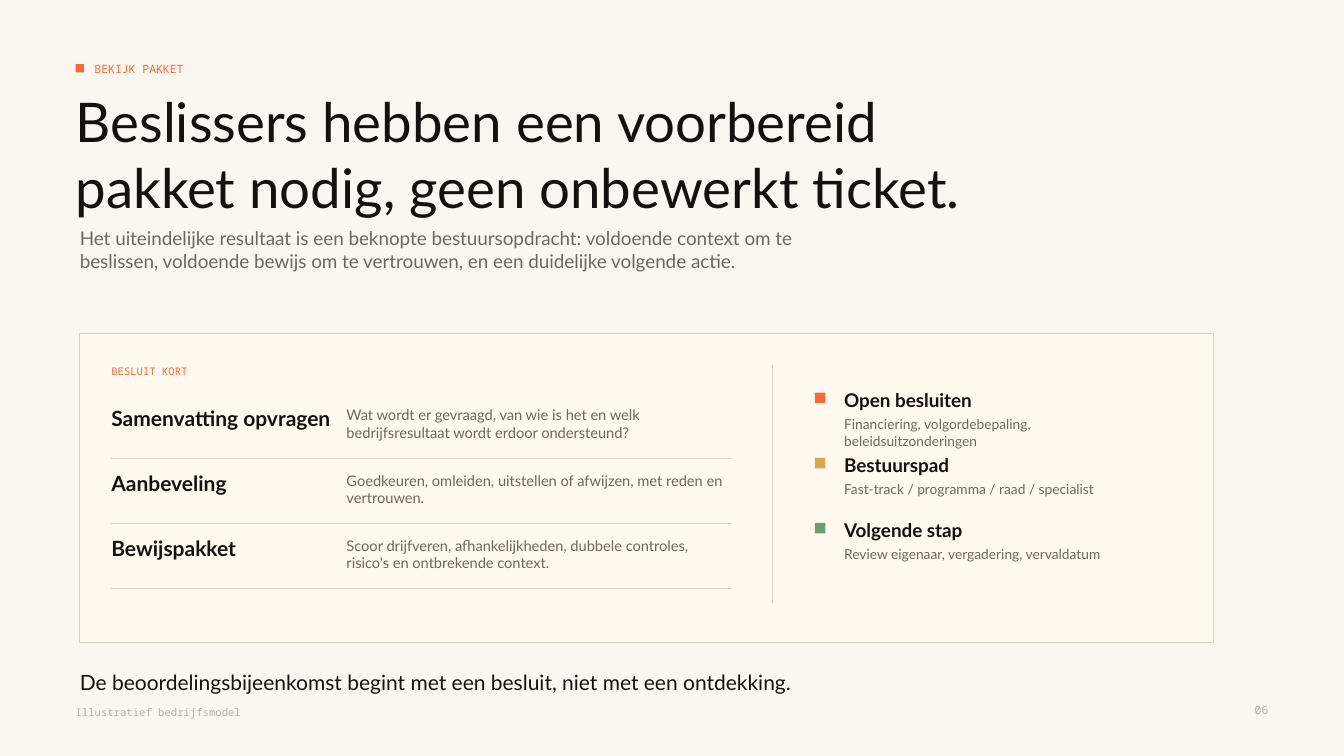
from pptx import Presentation
from pptx import util as u
from pptx.dml.color import RGBColor
from pptx.enum import shapes, text
from pptx.oxml.ns import qn
from lxml import etree

PAPER = RGBColor(0xFB, 0xF7, 0xF0)
CARD = RGBColor(0xFF, 0xF9, 0xEF)
INK = RGBColor(0x15, 0x11, 0x0E)
MUTED = RGBColor(0x6F, 0x67, 0x5F)
FAINT = RGBColor(0xB8, 0xAE, 0xA4)
RULE = RGBColor(0xD9, 0xD0, 0xC6)
ORANGE = RGBColor(0xF2, 0x6B, 0x3A)
GOLD = RGBColor(0xD6, 0xA8, 0x4F)
GREEN = RGBColor(0x6E, 0x9B, 0x78)

SANS, MONO = "Lato", "Noto Sans Mono"
COLUMNS, ROWS = 128, 72
MARGIN, CARD_LEFT, CARD_TEXT = 7.2, 7.6, 10.6
ROW_PITCH = 6.2

PACKET = [
    ("Samenvatting opvragen",
     "Wat wordt er gevraagd, van wie is het en welk bedrijfsresultaat wordt erdoor ondersteund?"),
    ("Aanbeveling",
     "Goedkeuren, omleiden, uitstellen of afwijzen, met reden en vertrouwen."),
    ("Bewijspakket",
     "Scoor drijfveren, afhankelijkheden, dubbele controles, risico's en ontbrekende context."),
]
OUTCOMES = [
    (ORANGE, "Open besluiten", "Financiering, volgordebepaling, beleidsuitzonderingen"),
    (GOLD, "Bestuurspad", "Fast-track / programma / raad / specialist"),
    (GREEN, "Volgende stap", "Review eigenaar, vergadering, vervaldatum"),
]


class Page:
    """Draws on one slide; every length is in grid columns and rows."""

    def __init__(self, deck):
        self.slide = deck.slides.add_slide(deck.slide_layouts[5])
        self.column = deck.slide_width / COLUMNS
        self.row = deck.slide_height / ROWS
        fill = self.slide.background.fill
        fill.solid()
        fill.fore_color.rgb = PAPER

    def place(self, left, top, width, height):
        return (u.Emu(round(left * self.column)), u.Emu(round(top * self.row)),
                u.Emu(round(width * self.column)), u.Emu(round(height * self.row)))

    def set_text(self, box, words, size, color, font=SANS, bold=False,
                 align=text.PP_ALIGN.LEFT, anchor=text.MSO_ANCHOR.TOP):
        frame = box.text_frame
        frame.word_wrap = True
        frame.auto_size = text.MSO_AUTO_SIZE.NONE
        frame.vertical_anchor = anchor
        frame.margin_left = frame.margin_right = 0
        frame.margin_top = frame.margin_bottom = 0
        para = frame.paragraphs[0]
        para.text = words
        para.alignment = align
        para.font.name = font
        para.font.size = u.Pt(size)
        para.font.bold = bold
        para.font.color.rgb = color

    def title(self, area, words, size):
        box = self.slide.shapes.title
        box.left, box.top, box.width, box.height = self.place(*area)
        self.set_text(box, words, size, INK)

    def label(self, area, words, size, color, **style):
        box = self.slide.shapes.add_textbox(*self.place(*area))
        self.set_text(box, words, size, color, **style)

    def block(self, area, color, border=None):
        shape = self.slide.shapes.add_shape(shapes.MSO_SHAPE.RECTANGLE, *self.place(*area))
        shape.shadow.inherit = False
        shape.fill.solid()
        shape.fill.fore_color.rgb = color
        if border is None:
            shape.line.fill.background()
        else:
            shape.line.color.rgb = border
            shape.line.width = u.Pt(0.75)

    def rule(self, left, top, width=0, height=0):
        x, y, across, down = self.place(left, top, width, height)
        line = self.slide.shapes.add_connector(
            shapes.MSO_CONNECTOR.STRAIGHT, x, y, x + across, y + down)
        line.line.color.rgb = RULE
        line.line.width = u.Pt(0.75)
        etree.SubElement(line._element.spPr, qn("a:effectLst"))


def draw_heading(page):
    page.block((MARGIN, 6.1, 0.8, 0.8), ORANGE)
    page.label((9, 5.4, 42, 2.4), "BEKIJK PAKKET", 8.2, ORANGE, font=MONO,
               anchor=text.MSO_ANCHOR.MIDDLE)
    page.title((MARGIN, 8.4, 86, 13.2),
               "Beslissers hebben een voorbereid pakket nodig, geen onbewerkt ticket.", 39)
    page.label((CARD_LEFT, 21.6, 68, 6.4),
               "Het uiteindelijke resultaat is een beknopte bestuursopdracht: voldoende context "
               "om te beslissen, voldoende bewijs om te vertrouwen, en een duidelijke volgende "
               "actie.", 13.5, MUTED)


def draw_card(page):
    page.block((CARD_LEFT, 31.8, 108, 29.4), CARD, RULE)
    page.label((CARD_TEXT, 34.8, 22, 1.8), "BESLUIT KORT", 7.5, ORANGE, font=MONO)
    for index, (name, question) in enumerate(PACKET):
        top = 38.6 + index * ROW_PITCH
        page.label((CARD_TEXT, top, 21, 2.4), name, 15, INK, bold=True)
        page.label((33, top + 0.1, 36, 4), question, 10.5, MUTED)
        page.rule(CARD_TEXT, top + 5.05, width=59)
    page.rule(73.55, 34.8, height=22.6)
    for index, (color, name, detail) in enumerate(OUTCOMES):
        top = 37 + index * ROW_PITCH
        page.block((77.6, top + 0.4, 1, 1), color)
        page.label((80.4, top, 20, 2.2), name, 13.5, INK, bold=True)
        page.label((80.4, top + 2.6, 27, 2.8), detail, 9.8, MUTED)


def draw_footer(page):
    page.label((CARD_LEFT, 63.8, 72, 2.8),
               "De beoordelingsbijeenkomst begint met een besluit, niet met een ontdekking.",
               15, INK)
    page.label((MARGIN, 67.2, 32, 1.8), "Illustratief bedrijfsmodel", 7.5, FAINT, font=MONO)
    page.label((116, 67, 4.8, 2), "06", 8.2, FAINT, font=MONO, align=text.PP_ALIGN.RIGHT)


def main():
    deck = Presentation()
    deck.slide_width, deck.slide_height = u.Inches(13.33), u.Inches(7.5)
    page = Page(deck)
    draw_heading(page)
    draw_card(page)
    draw_footer(page)
    deck.save("out.pptx")


if __name__ == "__main__":
    main()
